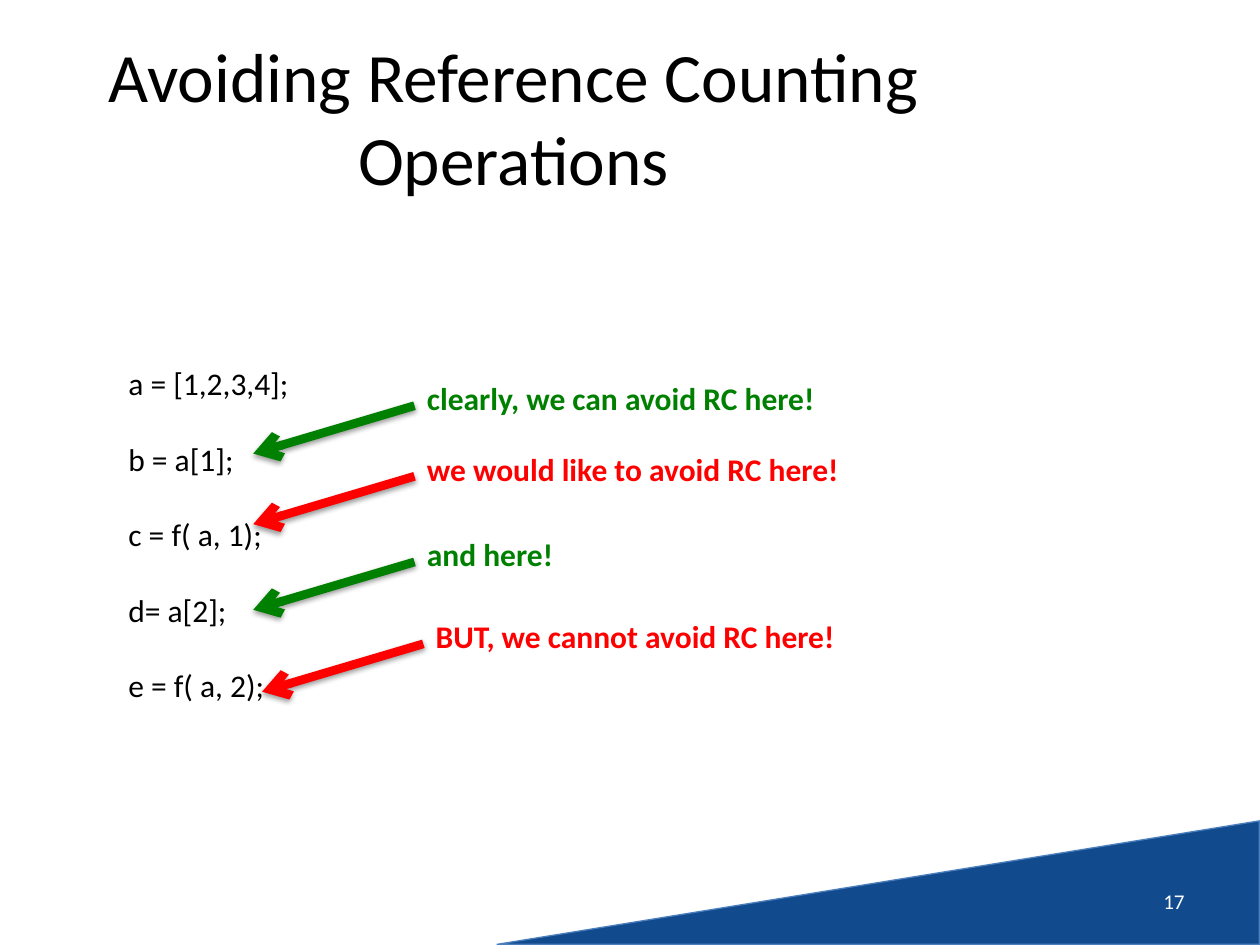
import pptx
import pptx.dml.color
import pptx.enum.shapes
import pptx.enum.text
import pptx.oxml
import pptx.oxml.ns
import pptx.util
from pptx.util import Inches

RGBColor = pptx.dml.color.RGBColor
ALIGN = pptx.enum.text.PP_ALIGN
ANCHOR = pptx.enum.text.MSO_ANCHOR
BLACK = RGBColor(0x00, 0x00, 0x00)
WHITE = RGBColor(0xFF, 0xFF, 0xFF)
RED = RGBColor(0xFF, 0x00, 0x00)
GREEN = RGBColor(0x00, 0x80, 0x00)
NAVY = RGBColor(0x11, 0x4B, 0x8E)
EDGE_BLUE = RGBColor(0x4B, 0x7E, 0xBC)


def add_text(text, left, top, width, height, size=18, color=BLACK, bold=False,
             align=ALIGN.LEFT, anchor=ANCHOR.TOP, wrap=False, gap=0):
    """Add a text box with one paragraph per line of text, gap points apart."""
    box = slide.shapes.add_textbox(Inches(left), Inches(top), Inches(width), Inches(height))
    frame = box.text_frame
    frame.word_wrap = wrap
    frame.vertical_anchor = anchor
    frame.text = text
    for index, para in enumerate(frame.paragraphs):
        para.alignment = align
        if index:
            para.space_before = pptx.util.Pt(gap)
        para.font.name = "Calibri"
        para.font.size = pptx.util.Pt(size)
        para.font.bold = bold
        para.font.color.rgb = color


def add_shadow(shape, distance, opacity):
    """Cast a soft black shadow straight down; distance in points, opacity in percent."""
    shape._element.spPr.append(pptx.oxml.parse_xml(
        f'<a:effectLst {pptx.oxml.ns.nsdecls("a")}>'
        f'<a:outerShdw blurRad="{pptx.util.Pt(3.1)}" dist="{pptx.util.Pt(distance)}"'
        ' dir="5400000" rotWithShape="0"><a:srgbClr val="000000">'
        f'<a:alpha val="{opacity * 1000}"/></a:srgbClr></a:outerShdw></a:effectLst>'))


deck = pptx.Presentation()
deck.slide_width = Inches(10)
deck.slide_height = Inches(7.5)
slide = deck.slides.add_slide(deck.slide_layouts[6])

wedge = slide.shapes.add_shape(
    pptx.enum.shapes.MSO_SHAPE.RIGHT_TRIANGLE,
    Inches(6.48), Inches(3.98), Inches(0.98), Inches(6.05))
wedge.rotation = 270
wedge.fill.solid()
wedge.fill.fore_color.rgb = NAVY
wedge.line.color.rgb = EDGE_BLUE
wedge.line.width = pptx.util.Pt(0.75)
add_shadow(wedge, distance=1.8, opacity=35)

add_text("Avoiding Reference Counting Operations", 0.5, 0.3, 7.15, 1.25, size=39.6,
         align=ALIGN.CENTER, anchor=ANCHOR.MIDDLE, wrap=True)

code_lines = ["a = [1,2,3,4];", "b = a[1];", "c = f( a, 1);", "d= a[2];", "e = f( a, 2);"]
add_text("\n".join(code_lines), 0.92, 2.84, 1.55, 3.12, gap=21.6)

# Comment, left, top, width, colour
comments = [
    ("we would like to avoid RC here!", 3.29, 3.52, 3.5, RED),
    ("BUT, we cannot avoid RC here!", 3.36, 4.85, 3.4, RED),
    ("clearly, we can avoid RC here!", 3.29, 2.96, 3.31, GREEN),
    ("and here!", 3.29, 4.2, 1.21, GREEN),
]
for comment, left, top, width, color in comments:
    arrow = slide.shapes.add_connector(
        pptx.enum.shapes.MSO_CONNECTOR.STRAIGHT,
        Inches(left), Inches(top + 0.26), Inches(left - 1.28), Inches(top + 0.64))
    arrow.line.color.rgb = color
    arrow.line.width = pptx.util.Pt(5)
    arrow.line._get_or_add_ln().append(pptx.oxml.parse_xml(
        f'<a:tailEnd {pptx.oxml.ns.nsdecls("a")} type="arrow"/>'))
    add_shadow(arrow, distance=1.6, opacity=38)
    add_text(comment, left, top, width, 0.4, color=color, bold=True)

add_text("17", 7.17, 6.95, 2.33, 0.4, size=12, color=WHITE,
         align=ALIGN.RIGHT, anchor=ANCHOR.MIDDLE, wrap=True)

deck.save("out.pptx")
